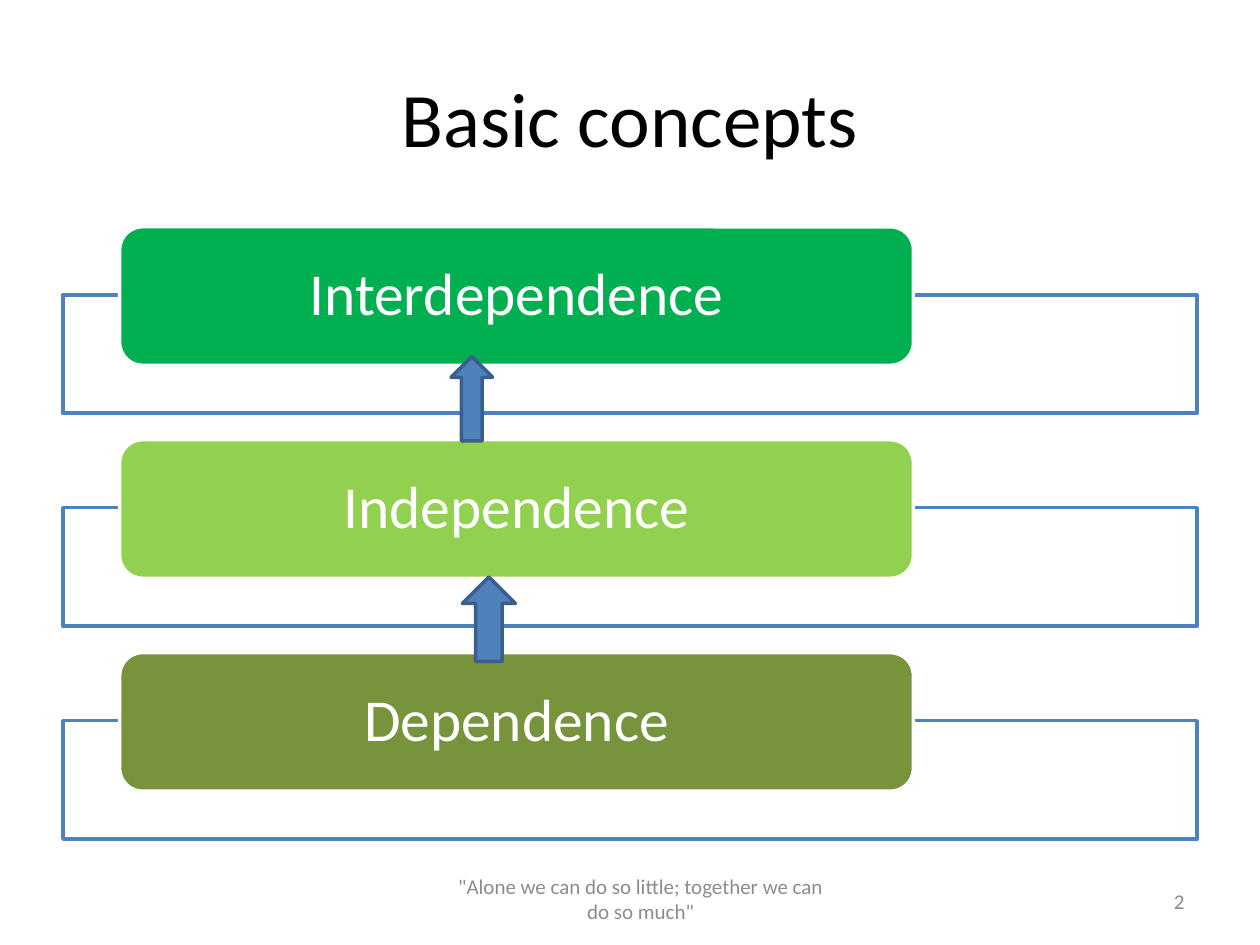
"""Build the "Basic concepts" slide: three stacked levels joined by upward arrows."""
import pptx
import pptx.dml.color
import pptx.enum.shapes
import pptx.enum.text
import pptx.oxml.ns
import pptx.util
from lxml import etree

Inches = pptx.util.Inches
Shapes = pptx.enum.shapes.MSO_SHAPE
Align = pptx.enum.text.PP_ALIGN

TITLE = "Basic concepts"
LEVELS = [("Interdependence", "00B050"), ("Independence", "92D050"), ("Dependence", "77933C")]
ARROWS = [(3.67, 4.58, 0.42, 0.67), (3.58, 2.83, 0.33, 0.67)]
FOOTERS = [
    ('"Alone we can do so little; together we can do so much"', (3.5, 6.92, 3.17, 0.43), Align.CENTER),
    ("2", (7.17, 6.95, 2.33, 0.4), Align.RIGHT),
]
FIRST_TOP, LEVEL_STEP, FRAME_DROP = 1.8, 1.69, 0.54
BLUE, DARK_BLUE, WHITE, BLACK, GRAY = "4F81BD", "3A5F8C", "FFFFFF", "000000", "8C8C8C"


def color(value):
    return pptx.dml.color.RGBColor.from_string(value)


def add_shape(page, kind, place, fill, line):
    shape = page.shapes.add_shape(kind, *map(Inches, place))
    shape.shadow.inherit = False
    shape.fill.solid()
    shape.fill.fore_color.rgb = color(fill)
    shape.line.color.rgb = color(line)
    shape.line.width = pptx.util.Pt(2)
    return shape


def set_opacity(shape, percent):
    tag = pptx.oxml.ns.qn
    fill_color = shape.fill._xPr.find(tag("a:solidFill")).find(tag("a:srgbClr"))
    etree.SubElement(fill_color, tag("a:alpha"), val=str(percent * 1000))


def write(box, text, size, text_color, align=Align.CENTER, side_margin=0.1, **paragraph_format):
    frame = box.text_frame
    frame_format = {
        "word_wrap": True,
        "auto_size": pptx.enum.text.MSO_AUTO_SIZE.NONE,
        "vertical_anchor": pptx.enum.text.MSO_ANCHOR.MIDDLE,
        "margin_left": Inches(side_margin),
        "margin_right": Inches(side_margin),
    }
    for name, value in frame_format.items():
        setattr(frame, name, value)
    para = frame.paragraphs[0]
    for name, value in {"alignment": align, **paragraph_format}.items():
        setattr(para, name, value)
    span = para.add_run()
    span.text = text
    for name, value in {"name": "Calibri", "size": pptx.util.Pt(size)}.items():
        setattr(span.font, name, value)
    span.font.color.rgb = color(text_color)


def add_level(page, index, label, fill):
    top = FIRST_TOP + index * LEVEL_STEP
    frame = add_shape(page, Shapes.RECTANGLE, (0.5, top + FRAME_DROP, 9, 0.94), WHITE, BLUE)
    set_opacity(frame, 90)
    card = add_shape(page, Shapes.ROUNDED_RECTANGLE, (0.95, top, 6.3, 1.1), fill, WHITE)
    write(card, label, 34, WHITE, side_margin=0.24, line_spacing=0.9)


def main():
    deck = pptx.Presentation()
    deck.slide_width, deck.slide_height = Inches(10), Inches(7.5)
    page = deck.slides.add_slide(deck.slide_layouts[5])

    title = page.shapes.title
    title.left, title.top, title.width, title.height = map(Inches, (0.5, 0.3, 9, 1.25))
    write(title, TITLE, 44, BLACK)

    for index, (label, fill) in enumerate(LEVELS):
        add_level(page, index, label, fill)
    for place in ARROWS:
        add_shape(page, Shapes.UP_ARROW, place, BLUE, DARK_BLUE)
    for text, place, align in FOOTERS:
        box = page.shapes.add_textbox(*map(Inches, place))
        write(box, text, 12, GRAY, align)

    deck.save("out.pptx")


if __name__ == "__main__":
    main()
